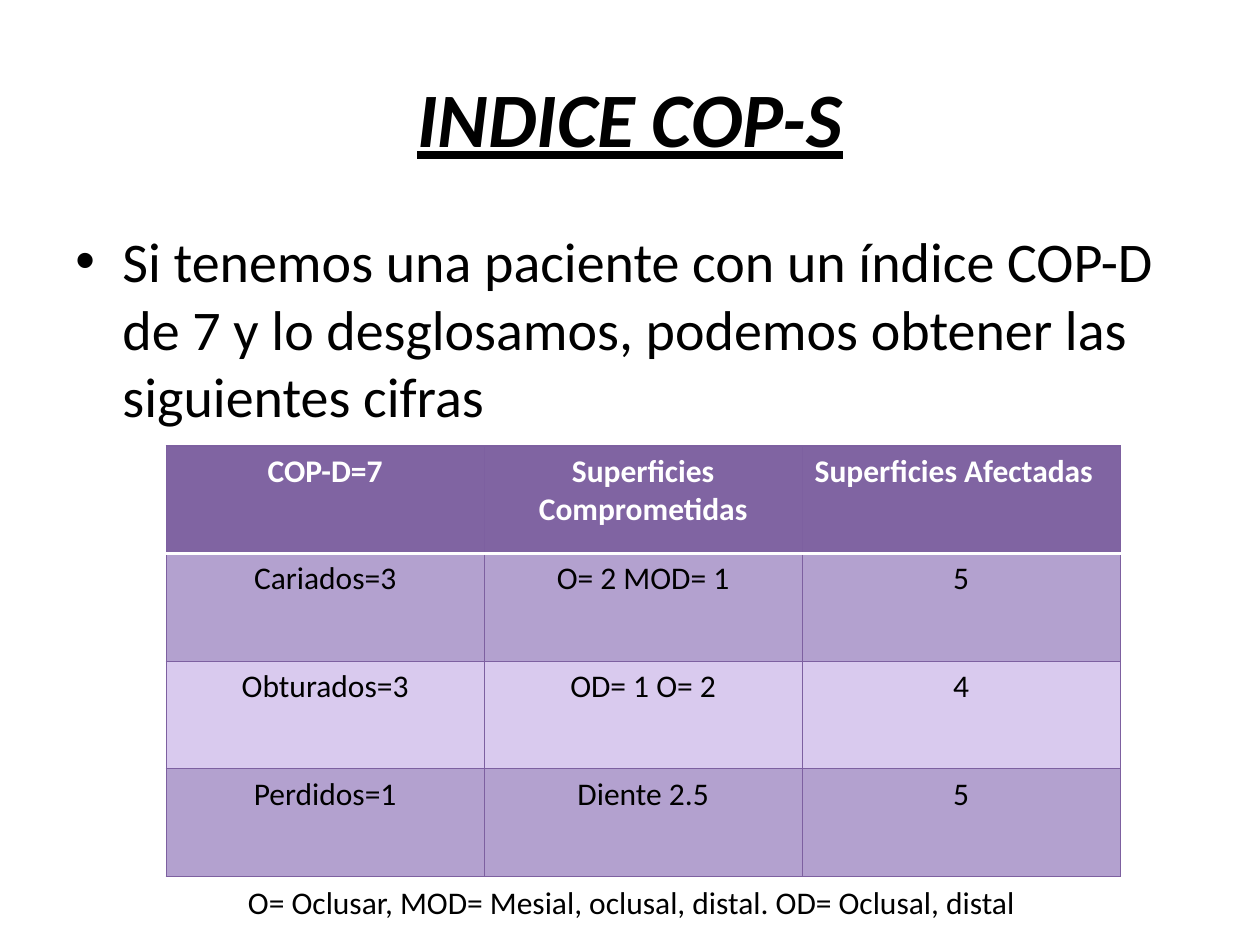
from dataclasses import dataclass

from lxml import etree
from pptx import Presentation
from pptx import util as u
from pptx.dml import color
from pptx.enum import text
from pptx.oxml import ns


@dataclass(frozen=True)
class Theme:
    font: str = "Calibri"
    bullet_font: str = "Arial"
    ink: str = "000000"
    paper: str = "FFFFFF"
    header: str = "8064A2"
    band_dark: str = "B3A1CF"
    band_light: str = "D9CAEE"
    rule: str = "7D60A0"
    title_size: int = 44
    body_size: int = 32
    small_size: int = 18


class IndexSlide:
    def __init__(self, slide, theme):
        self.slide = slide
        self.theme = theme
        slide.background.fill.solid()
        slide.background.fill.fore_color.rgb = color.RGBColor.from_string(theme.paper)

    def add_words(self, paragraph, words, size, ink, bold=False, italic=False, underline=False):
        run = paragraph.add_run()
        run.text = words
        font = run.font
        font.name, font.size = self.theme.font, u.Pt(size)
        font.bold, font.italic, font.underline = bold, italic, underline
        font.color.rgb = color.RGBColor.from_string(ink)

    def frame(self, left, top, width, height, anchor=text.MSO_ANCHOR.TOP):
        box = self.slide.shapes.add_textbox(u.Cm(left), u.Cm(top), u.Cm(width), u.Cm(height))
        box.text_frame.word_wrap = True
        box.text_frame.vertical_anchor = anchor
        return box.text_frame.paragraphs[0]

    def title(self, words, *place):
        heading = self.frame(*place, anchor=text.MSO_ANCHOR.MIDDLE)
        heading.alignment = text.PP_ALIGN.CENTER
        self.add_words(heading, words, self.theme.title_size, self.theme.ink,
                       bold=True, italic=True, underline=True)

    def bullet(self, words, *place):
        point = self.frame(*place)
        properties = point._p.get_or_add_pPr()
        indent = u.Cm(0.95)
        properties.set("marL", str(indent))
        properties.set("indent", str(-indent))
        etree.SubElement(properties, ns.qn("a:buFont"), typeface=self.theme.bullet_font)
        etree.SubElement(properties, ns.qn("a:buChar"), char="•")
        self.add_words(point, words, self.theme.body_size, self.theme.ink)

    def caption(self, words, *place):
        self.add_words(self.frame(*place), words, self.theme.small_size, self.theme.ink)

    def border(self, cell, side, ink, points):
        line = etree.SubElement(cell._tc.get_or_add_tcPr(), ns.qn(f"a:ln{side}"),
                                w=str(u.Pt(points)))
        fill = etree.SubElement(line, ns.qn("a:solidFill"))
        etree.SubElement(fill, ns.qn("a:srgbClr"), val=ink)

    def cell(self, cell, words, row, align):
        theme = self.theme
        is_header = row == 0
        header_edge = {0: "B", 1: "T"}.get(row)
        for side in "LRTB":
            if side == header_edge:
                self.border(cell, side, theme.paper, 2)
            else:
                self.border(cell, side, theme.rule, 0.75)
        band = theme.band_dark if row % 2 else theme.band_light
        cell.fill.solid()
        cell.fill.fore_color.rgb = color.RGBColor.from_string(theme.header if is_header else band)
        paragraph = cell.text_frame.paragraphs[0]
        paragraph.alignment = align
        self.add_words(paragraph, words, theme.small_size,
                       theme.paper if is_header else theme.ink, bold=is_header)

    def table(self, records, left, top, column_width, row_height):
        row_count, column_count = len(records), len(records[0])
        grid = self.slide.shapes.add_table(
            row_count, column_count, u.Cm(left), u.Cm(top),
            u.Cm(column_width * column_count), u.Cm(row_height * row_count)).table
        for column in grid.columns:
            column.width = u.Cm(column_width)
        for row, record in enumerate(records):
            grid.rows[row].height = u.Cm(row_height)
            for column, words in enumerate(record):
                last_heading = row == 0 and column == column_count - 1
                align = text.PP_ALIGN.LEFT if last_heading else text.PP_ALIGN.CENTER
                self.cell(grid.cell(row, column), words, row, align)


def main():
    deck = Presentation()
    deck.slide_width, deck.slide_height = u.Cm(25.4), u.Cm(19.05)
    page = IndexSlide(deck.slides.add_slide(deck.slide_layouts[6]), Theme())
    page.title("INDICE COP-S", 1.27, 0.76, 22.86, 3.18)
    page.bullet("Si tenemos una paciente con un índice COP-D de 7 y lo desglosamos, "
                "podemos obtener las siguientes cifras", 1.27, 4.45, 22.86, 12.57)
    surfaces = [
        ("COP-D=7", "Superficies Comprometidas", "Superficies Afectadas"),
        ("Cariados=3", "O= 2 MOD= 1", "5"),
        ("Obturados=3", "OD= 1 O= 2", "4"),
        ("Perdidos=1", "Diente 2.5", "5"),
    ]
    page.table(surfaces, 3.35, 8.99, column_width=6.41, row_height=2.17)
    page.caption("O= Oclusar, MOD= Mesial, oclusal, distal. OD= Oclusal, distal",
                 4.75, 17.68, 23.34, 1.02)
    deck.save("out.pptx")


if __name__ == "__main__":
    main()
